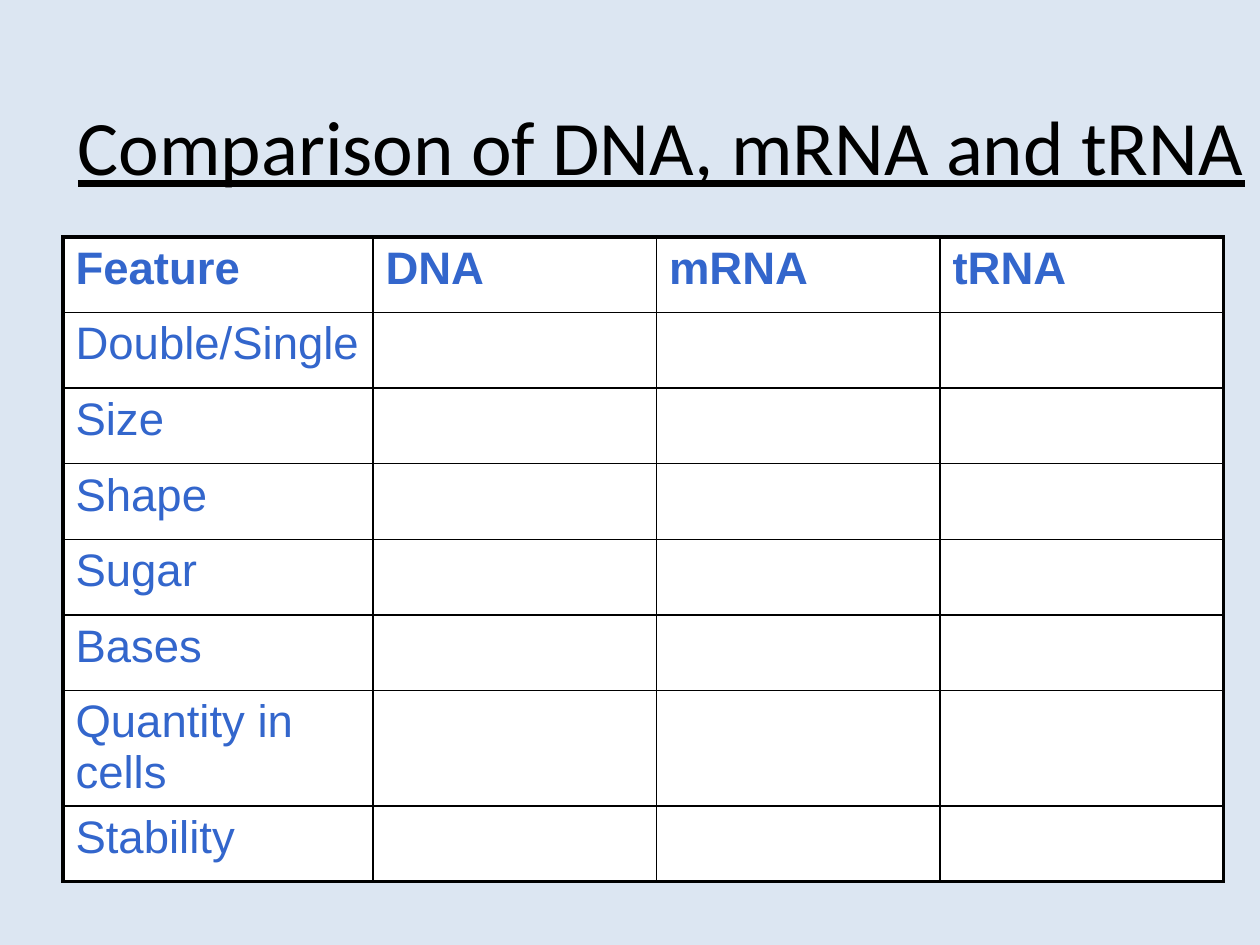
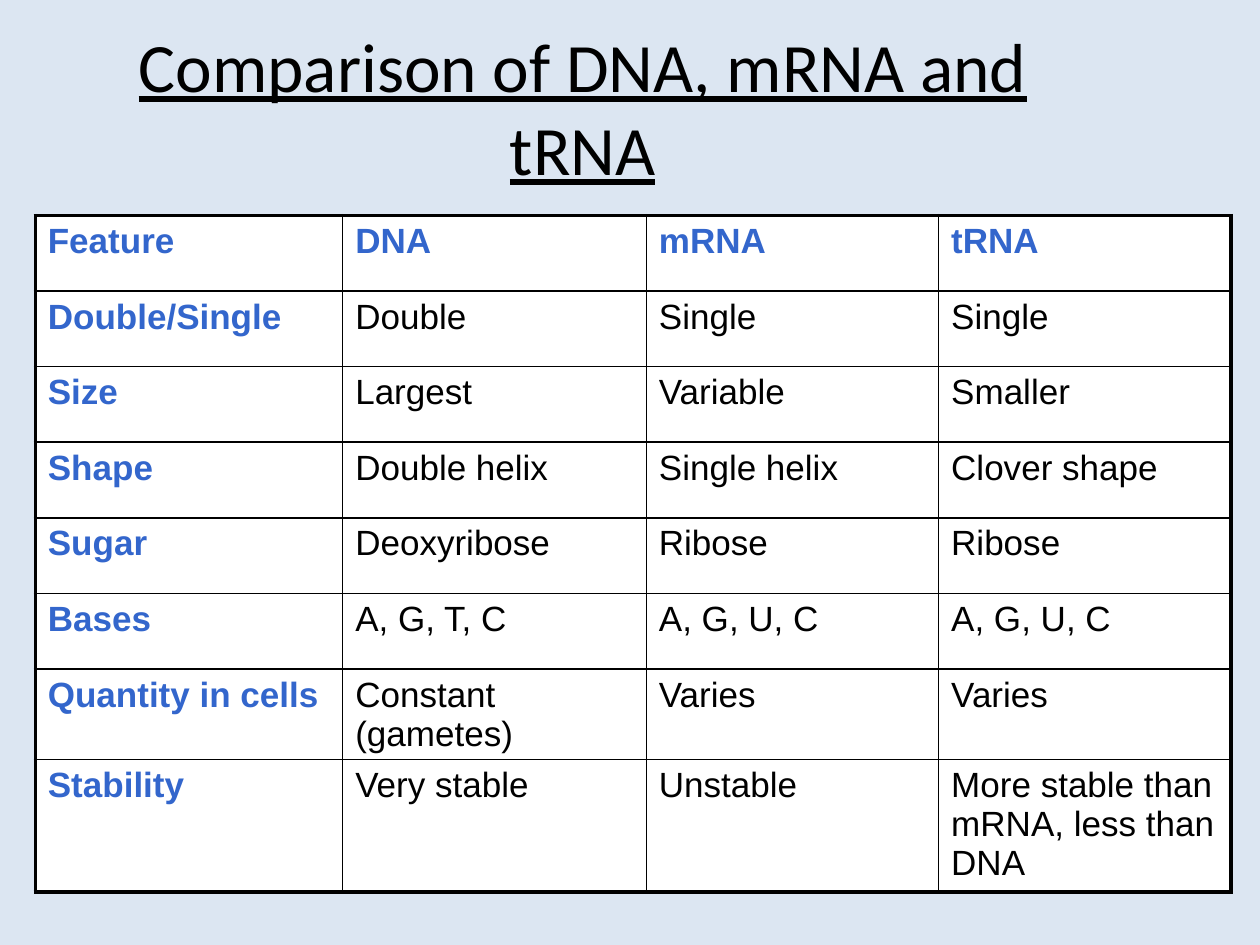
from lxml.etree import SubElement
from pptx import Presentation
from pptx.dml.color import RGBColor as Rgb
from pptx.enum.text import MSO_ANCHOR as Anchor, PP_ALIGN as Align
from pptx.oxml.ns import qn
from pptx.util import Inches, Pt

TITLE = "Comparison of DNA, mRNA and tRNA"
HEADS = ["Feature", "DNA", "mRNA", "tRNA"]
FACTS = [
    ("Double/Single", "Double", "Single", "Single"),
    ("Size", "Largest", "Variable", "Smaller"),
    ("Shape", "Double helix", "Single helix", "Clover shape"),
    ("Sugar", "Deoxyribose", "Ribose", "Ribose"),
    ("Bases", "A, G, T, C", "A, G, U, C", "A, G, U, C"),
    ("Quantity in cells", "Constant (gametes)", "Varies", "Varies"),
    ("Stability", "Very stable", "Unstable", "More stable than mRNA, less than DNA"),
]
BLANKS = [(fact[0], "", "", "") for fact in FACTS]

SLIDES = [
    dict(rows=BLANKS, title=(0.5, 0.44, 9.5, 1.42), title_size=44,
         corner=(0.5, 1.88), cols=(2.46, 2.25, 2.25, 2.25),
         tall={6: 0.9}, size=26, bold=False),
    dict(rows=FACTS, title=(0.5, 0.13, 8.25, 1.42), title_size=39.6,
         corner=(0.28, 1.71), cols=(2.44, 2.41, 2.32, 2.32),
         tall={6: 0.72, 7: 1.03}, size=20, bold=True),
]

SKY = Rgb(0xDC, 0xE6, 0xF2)
BLUE = Rgb(0x33, 0x66, 0xCC)
BLACK = Rgb(0, 0, 0)
WHITE = Rgb(0xFF, 0xFF, 0xFF)
ROW, THIN, THICK = 0.6, 1, 2.25


def write(frame, text, font="Arial", size=20, color=BLACK, bold=False,
          under=False, align=Align.LEFT):
    para = frame.paragraphs[0]
    para.alignment = align
    run = para.add_run()
    run.text = text
    face = run.font
    face.name, face.size, face.bold, face.underline = font, Pt(size), bold, under
    face.color.rgb = color


def edge(cell, outer):
    props = cell._tc.get_or_add_tcPr()
    for spot, side in enumerate("LRTB"):
        width = THICK if side in outer else THIN
        line = SubElement(props, qn(f"a:ln{side}"), w=str(Pt(width)))
        fill = SubElement(line, qn("a:solidFill"))
        SubElement(fill, qn("a:srgbClr"), val=str(BLACK))
        props.insert(spot, line)


def add_title(slide, place, size):
    box = slide.shapes.add_textbox(*map(Inches, place))
    frame = box.text_frame
    frame.word_wrap = True
    frame.vertical_anchor = Anchor.MIDDLE
    write(frame, TITLE, font="Calibri", size=size, under=True, align=Align.CENTER)


def add_grid(slide, rows, corner, cols, tall, size, bold):
    rows = [HEADS, *rows]
    high = [tall.get(r, ROW) for r in range(len(rows))]
    spans = (*corner, sum(cols), sum(high))
    table = slide.shapes.add_table(len(rows), len(cols), *map(Inches, spans)).table
    table.first_row = table.horz_banding = False
    for col, width in zip(table.columns, cols):
        col.width = Inches(width)
    for r, row in enumerate(rows):
        table.rows[r].height = Inches(high[r])
        for c, text in enumerate(row):
            cell = table.cell(r, c)
            cell.margin_bottom = 0
            cell.fill.solid()
            cell.fill.fore_color.rgb = WHITE
            ends = {"L": c == 0, "R": c == len(cols) - 1,
                    "T": r == 0, "B": r == len(rows) - 1}
            edge(cell, [side for side, last in ends.items() if last])
            if text:
                label = r == 0 or c == 0
                write(cell.text_frame, text, size=size,
                      color=BLUE if label else BLACK,
                      bold=r == 0 or (label and bold))


def main():
    deck = Presentation()
    deck.slide_width, deck.slide_height = Inches(10), Inches(7.5)
    for plan in SLIDES:
        slide = deck.slides.add_slide(deck.slide_layouts[6])
        slide.background.fill.solid()
        slide.background.fill.fore_color.rgb = SKY
        add_title(slide, plan["title"], plan["title_size"])
        add_grid(slide, plan["rows"], plan["corner"], plan["cols"],
                 plan["tall"], plan["size"], plan["bold"])
    deck.save("out.pptx")


if __name__ == "__main__":
    main()
